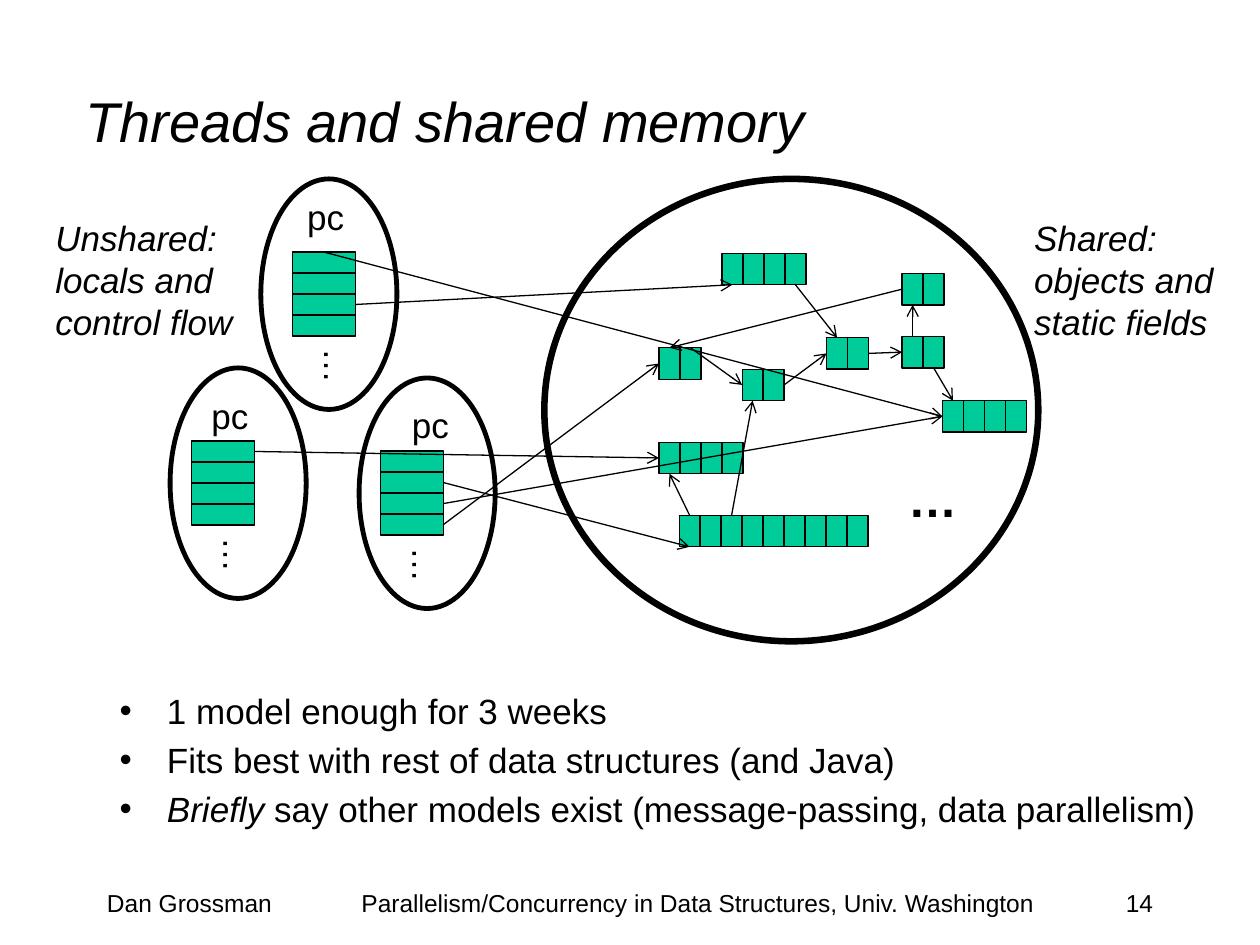
from lxml import etree
from pptx import Presentation
from pptx.dml.color import RGBColor
from pptx.enum.shapes import MSO_CONNECTOR, MSO_SHAPE
from pptx.enum.text import MSO_ANCHOR, MSO_AUTO_SIZE, PP_ALIGN
from pptx.oxml.ns import qn
from pptx.util import Inches, Pt

BLACK = RGBColor(0x00, 0x00, 0x00)
GREEN = RGBColor(0x00, 0xCC, 0x99)
RECTANGLE, ELLIPSE = MSO_SHAPE.RECTANGLE, MSO_SHAPE.OVAL
STRAIGHT = MSO_CONNECTOR.STRAIGHT
LEFT, CENTER, RIGHT = PP_ALIGN.LEFT, PP_ALIGN.CENTER, PP_ALIGN.RIGHT
MIDDLE = MSO_ANCHOR.MIDDLE
GROW, FIXED = MSO_AUTO_SIZE.SHAPE_TO_FIT_TEXT, MSO_AUTO_SIZE.NONE
TOP_SIDE, LEFT_SIDE, BOTTOM_SIDE, RIGHT_SIDE = range(4)
STEP = 1 / 6


class Diagram:
    font_name = "Arial"
    thin = 0.75

    def __init__(self, slide):
        self.slide = slide

    def style(self, paragraph, size, align=LEFT, italic=None, bold=None):
        paragraph.alignment = align
        font = paragraph.font
        font.name, font.size = self.font_name, Pt(size)
        font.italic, font.bold = italic, bold
        font.color.rgb = BLACK

    def place(self, item, left, top, width, height):
        item.left, item.top = Inches(left), Inches(top)
        item.width, item.height = Inches(width), Inches(height)

    def title(self, text, box):
        heading = self.slide.shapes.title
        self.place(heading, *box)
        heading.text_frame.text = text
        heading.text_frame.vertical_anchor = MIDDLE
        heading.text_frame.auto_size = FIXED
        self.style(heading.text_frame.paragraphs[0], 32, italic=True)

    def bullets(self, points, box):
        body = self.slide.placeholders[1]
        self.place(body, *box)
        frame = body.text_frame
        frame.auto_size = FIXED
        for number, pieces in enumerate(points):
            point = frame.paragraphs[0] if number == 0 else frame.add_paragraph()
            self.style(point, 20)
            for text, italic in pieces:
                run = point.add_run()
                run.text = text
                if italic:
                    run.font.italic = True

    def text(self, text, box, size, align=LEFT, wrap=False, rotation=0, **emphasis):
        label = self.slide.shapes.add_textbox(*map(Inches, box))
        label.rotation = rotation
        frame = label.text_frame
        frame.word_wrap = wrap
        frame.auto_size = FIXED if wrap else GROW
        frame.text = text
        for paragraph in frame.paragraphs:
            self.style(paragraph, size, align, **emphasis)

    def outline(self, kind, box, weight, fill=None):
        outline = self.slide.shapes.add_shape(kind, *map(Inches, box))
        outline.shadow.inherit = False
        if fill is None:
            outline.fill.background()
        else:
            outline.fill.solid()
            outline.fill.fore_color.rgb = fill
        outline.line.color.rgb = BLACK
        outline.line.width = Pt(weight)
        return outline

    def memory(self, left, top, count):
        return [self.outline(RECTANGLE, (left + i * STEP, top, STEP, 0.25), self.thin, GREEN)
                for i in range(count)]

    def thread(self, left, top, stack_left, pc_left, pc_top):
        self.outline(ELLIPSE, (left, top, 1.08, 1.83), 2.75)
        stack_top = top + 0.58
        stack = [self.outline(RECTANGLE, (stack_left, stack_top + i * STEP, 0.5, STEP),
                              self.thin, GREEN) for i in range(4)]
        self.text("…", (stack_left + 0.12, stack_top + 0.69, 0.48, 0.44), 20, rotation=90)
        self.text("pc", (pc_left, pc_top, 0.5, 0.44), 20)
        return stack

    def arrow(self, source, source_side, target, target_side):
        pointer = self.slide.shapes.add_connector(STRAIGHT, 0, 0, 0, 0)
        pointer.begin_connect(source, source_side)
        pointer.end_connect(target, target_side)
        pointer.line.color.rgb = BLACK
        pointer.line.width = Pt(self.thin)
        etree.SubElement(pointer.line._get_or_add_ln(), qn("a:tailEnd"), type="arrow")
        etree.SubElement(pointer._element.spPr, qn("a:effectLst"))


def main():
    deck = Presentation()
    deck.slide_width, deck.slide_height = Inches(10), Inches(7.5)
    diagram = Diagram(deck.slides.add_slide(deck.slide_layouts[1]))

    diagram.title("Threads and shared memory", (0.58, 0.33, 8.5, 1.25))
    diagram.bullets([
        [("1 model enough for 3 weeks", False)],
        [("Fits best with rest of data structures (and Java)", False)],
        [("Briefly", True),
         (" say other models exist (message-passing, data parallelism)", False)],
    ], (0.85, 5.42, 8.75, 1.42))

    for text, left, width, align in (
        ("Dan Grossman", 0.75, 2.08, LEFT),
        ("14", 7.17, 2.08, RIGHT),
        ("Parallelism/Concurrency in Data Structures, Univ. Washington", 2.75, 5.58, CENTER),
    ):
        diagram.text(text, (left, 7, width, 0.5), 14, align, wrap=True)

    diagram.outline(ELLIPSE, (4.32, 1.42, 3.92, 3.67), 3.75)
    pair = diagram.memory(5.23, 2.76, 2)
    quad = diagram.memory(5.23, 3.51, 4)
    center = diagram.memory(5.89, 2.93, 2)
    middle = diagram.memory(6.56, 2.68, 2)
    top = diagram.memory(5.73, 2.01, 4)
    far = diagram.memory(7.48, 3.18, 4)
    long = diagram.memory(5.39, 4.09, 9)
    lower = diagram.memory(7.16, 2.67, 2)
    upper = diagram.memory(7.16, 2.17, 2)
    diagram.text("…", (7.11, 3.67, 0.59, 0.57), 28, bold=True)

    upper_thread = diagram.thread(2.07, 1.42, 2.32, 2.34, 1.5)
    left_thread = diagram.thread(1.35, 2.92, 1.52, 1.58, 3.08)
    right_thread = diagram.thread(2.85, 3, 3.02, 3.17, 3.15)

    for link in (
        (top[3], BOTTOM_SIDE, middle[0], TOP_SIDE),
        (pair[1], TOP_SIDE, center[0], LEFT_SIDE),
        (center[1], RIGHT_SIDE, middle[0], LEFT_SIDE),
        (long[0], TOP_SIDE, quad[0], BOTTOM_SIDE),
        (long[2], TOP_SIDE, center[0], BOTTOM_SIDE),
        (upper_thread[0], TOP_SIDE, far[0], LEFT_SIDE),
        (upper_thread[2], RIGHT_SIDE, top[0], BOTTOM_SIDE),
        (left_thread[0], RIGHT_SIDE, quad[0], LEFT_SIDE),
        (right_thread[1], RIGHT_SIDE, long[0], BOTTOM_SIDE),
        (right_thread[3], RIGHT_SIDE, pair[0], LEFT_SIDE),
        (right_thread[2], RIGHT_SIDE, far[0], LEFT_SIDE),
        (middle[1], RIGHT_SIDE, lower[0], LEFT_SIDE),
        (lower[0], TOP_SIDE, upper[0], BOTTOM_SIDE),
        (upper[0], LEFT_SIDE, pair[0], TOP_SIDE),
        (lower[1], BOTTOM_SIDE, far[0], TOP_SIDE),
    ):
        diagram.arrow(*link)

    diagram.text("Unshared:\nlocals and\ncontrol flow", (0.34, 1.67, 1.62, 1.11), 20, italic=True)
    diagram.text("Shared:\nobjects and\nstatic fields", (8.11, 1.67, 1.64, 1.11), 20, italic=True)

    deck.save("out.pptx")


if __name__ == "__main__":
    main()
